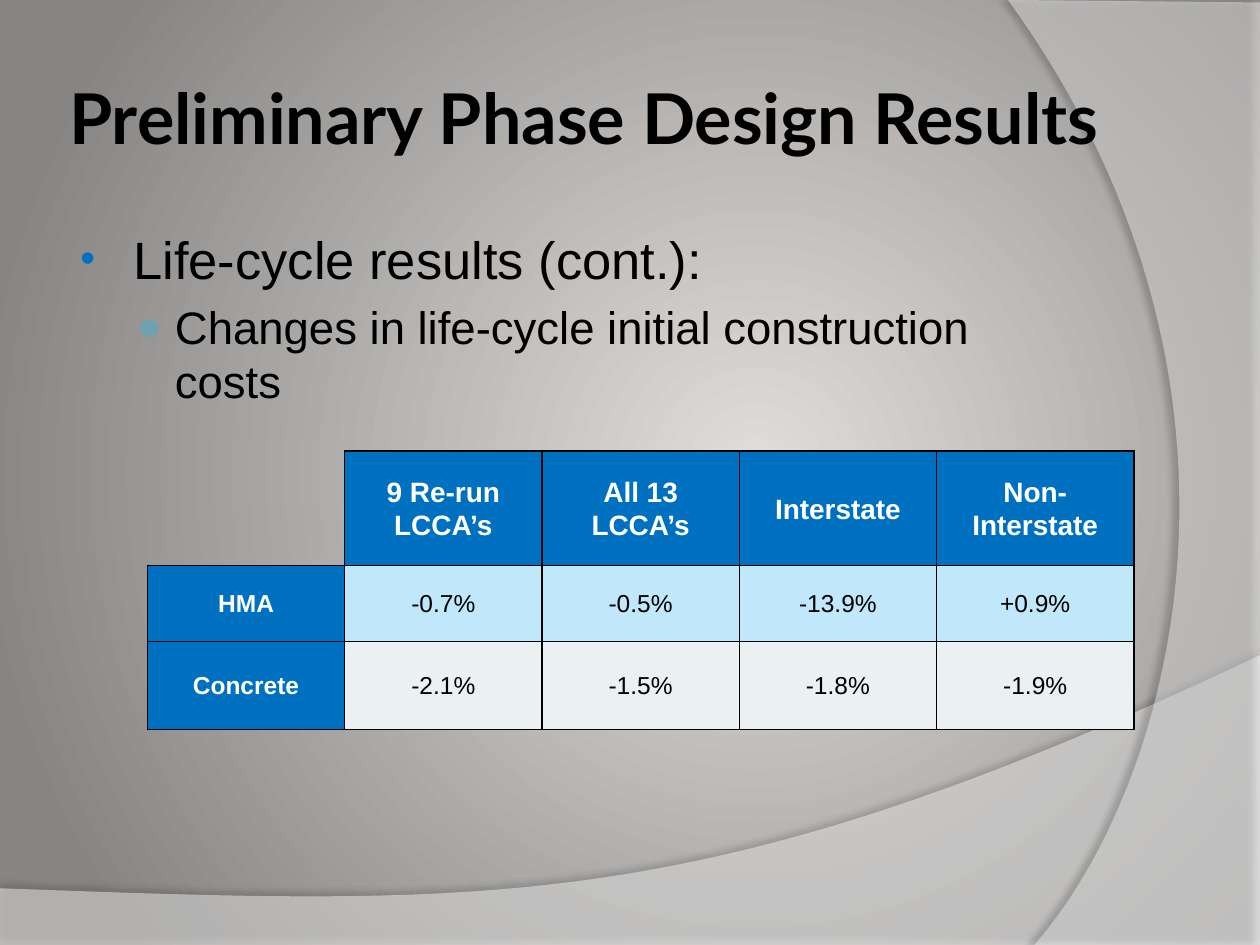
"""Build the preliminary phase design results slide."""
from lxml import etree
from pptx import Presentation
from pptx.dml.color import RGBColor
from pptx.enum.text import MSO_ANCHOR as ANC, PP_ALIGN as AL
from pptx.oxml import parse_xml
from pptx.oxml.ns import nsdecls, qn
from pptx.util import Inches, Pt

W, H = 10, 7.5
C = {"black": "000000", "white": "FFFFFF", "blue": "0070C0", "teal": "6EA0B0",
     "sky": "C0E8FA", "mist": "EBF0F2", "glow": "E0DDDA", "edge": "878583"}
TITLE = "Preliminary Phase Design Results"
BULLETS = [
    dict(text="Life-cycle results (cont.):", size=30, left=0.46, hang=0.42, char="•", color="blue", share=80),
    dict(text="Changes in life-cycle initial construction costs", size=26, left=0.79, hang=0.3,
         char="●", color="teal", share=90),
]
ROWS = [
    ("", "9 Re-run LCCA’s", "All 13 LCCA’s", "Interstate", "Non-Interstate"),
    ("HMA", "-0.7%", "-0.5%", "-13.9%", "+0.9%"),
    ("Concrete", "-2.1%", "-1.5%", "-1.8%", "-1.9%"),
]
ROW_H = [0.91, 0.6, 0.7]
ROW_FILL = ["blue", "sky", "mist"]
TABLE_X, TABLE_Y, TABLE_W = 1.17, 3.58, 7.83
SWEEPS = [
    dict(start=(0, 7.05), lines=[(0, 7.51), (W, 7.51), (W, 5.2)],
         curve=[(5.59, 7.29), (3.91, 7.19), (0, 7.05)], alpha=45, shade=35, dist=3.5, angle=270),
    dict(start=(W, 0.02), lines=[(W, H), (8.21, H)],
         curve=[(9.35, 6.19), (10.18, 3), (8, 0)], alpha=40, shade=45, dist=4, angle=180),
]


def rgb(name):
    return RGBColor.from_string(C[name])


def add_run(p, text, size, color="black", font="Arial", bold=False):
    r = p.add_run()
    r.text = text
    f = r.font
    f.size, f.name, f.bold = Pt(size), font, bold
    f.color.rgb = rgb(color)


def bezier(points, steps=60):
    for i in range(1, steps + 1):
        t = i / steps
        weights = ((1 - t) ** 3, 3 * t * (1 - t) ** 2, 3 * t * t * (1 - t), t ** 3)
        yield tuple(sum(k * pt[axis] for k, pt in zip(weights, points)) for axis in (0, 1))


def paint_background(s):
    fill = s.background.fill
    fill.gradient()
    for stop, name in zip(fill.gradient_stops, ("glow", "edge")):
        stop.color.rgb = rgb(name)
    grad = next(s.element.iter(qn("a:gradFill")))
    grad.replace(grad.find(qn("a:lin")), parse_xml(
        f'<a:path {nsdecls("a")} path="circle">'
        '<a:fillToRect l="60000" t="50000" r="40000" b="50000"/></a:path>'))


def add_sweep(s, sweep):
    points = sweep["lines"] + list(bezier([sweep["lines"][-1]] + sweep["curve"]))
    fb = s.shapes.build_freeform(*map(Inches, sweep["start"]))
    fb.add_line_segments([(Inches(x), Inches(y)) for x, y in points], close=True)
    sp = fb.convert_to_shape()
    sp.fill.solid()
    sp.fill.fore_color.rgb = rgb("white")
    sp.line.fill.background()
    color = next(sp.element.spPr.iter(qn("a:srgbClr")))
    etree.SubElement(color, qn("a:alpha"), val=str(sweep["alpha"] * 1000))
    sp.element.spPr.append(parse_xml(
        f'<a:effectLst {nsdecls("a")}><a:outerShdw blurRad="{Pt(4)}" dist="{Pt(sweep["dist"])}" '
        f'dir="{sweep["angle"] * 60000}" rotWithShape="0"><a:srgbClr val="{C["black"]}">'
        f'<a:alpha val="{sweep["shade"] * 1000}"/></a:srgbClr></a:outerShdw></a:effectLst>'))


def set_title(s):
    title = s.shapes.title
    title.element.getparent().append(title.element)
    title.left, title.top, title.width, title.height = map(Inches, (0.5, 0.3, 8.67, 1.25))
    tf = title.text_frame
    tf.margin_left = tf.margin_right = tf.margin_top = tf.margin_bottom = Inches(0.05)
    tf.vertical_anchor, tf.word_wrap = ANC.MIDDLE, True
    p = tf.paragraphs[0]
    p.alignment = AL.LEFT
    add_run(p, TITLE, 40, font="Lato", bold=True)


def add_bullets(s):
    tf = s.shapes.add_textbox(*map(Inches, (0.5, 1.75, 7.42, 4.95))).text_frame
    tf.word_wrap = True
    for level, b in enumerate(BULLETS):
        p = tf.add_paragraph() if level else tf.paragraphs[0]
        p.level, p.space_before = level, Pt(b["size"] * 0.2)
        add_run(p, b["text"], b["size"])
        pPr = p._p.get_or_add_pPr()
        pPr.set("marL", str(Inches(b["left"])))
        pPr.set("indent", str(-Inches(b["hang"])))
        color = etree.SubElement(pPr, qn("a:buClr"))
        etree.SubElement(color, qn("a:srgbClr"), val=C[b["color"]])
        etree.SubElement(pPr, qn("a:buSzPct"), val=str(b["share"] * 1000))
        etree.SubElement(pPr, qn("a:buFont"), typeface="Arial")
        etree.SubElement(pPr, qn("a:buChar"), char=b["char"])


def set_borders(cell, visible):
    tcPr = cell._tc.get_or_add_tcPr()
    for i, side in enumerate("LRTB"):
        paint = f'<a:solidFill><a:srgbClr val="{C["black"]}"/></a:solidFill>' if side in visible else "<a:noFill/>"
        tcPr.insert(i, parse_xml(f'<a:ln{side} {nsdecls("a")} w="{Pt(1)}">{paint}</a:ln{side}>'))


def fill_cell(cell, text, row, col):
    header = row == 0 or col == 0
    if text:
        cell.fill.solid()
        cell.fill.fore_color.rgb = rgb("blue" if header else ROW_FILL[row])
        p = cell.text_frame.paragraphs[0]
        p.alignment, p.line_spacing = AL.CENTER, 1.07
        add_run(p, text, 14 if row else 16, "white" if header else "black", bold=header)
    else:
        cell.fill.background()
    cell.vertical_anchor = ANC.MIDDLE
    cell.margin_left = cell.margin_right = Inches(0.07)
    cell.margin_top = cell.margin_bottom = 0
    set_borders(cell, "LRTB" if text else "RB")


def add_results(s):
    cols = len(ROWS[0])
    table = s.shapes.add_table(len(ROWS), cols, *map(Inches, (TABLE_X, TABLE_Y, TABLE_W, sum(ROW_H)))).table
    table.first_row = table.horz_banding = False
    for column in table.columns:
        column.width = Inches(TABLE_W / cols)
    for i, (texts, height) in enumerate(zip(ROWS, ROW_H)):
        table.rows[i].height = Inches(height)
        for j, text in enumerate(texts):
            fill_cell(table.cell(i, j), text, i, j)


def main():
    prs = Presentation()
    prs.slide_width, prs.slide_height = Inches(W), Inches(H)
    s = prs.slides.add_slide(prs.slide_layouts[5])
    paint_background(s)
    for sweep in SWEEPS:
        add_sweep(s, sweep)
    set_title(s)
    add_bullets(s)
    add_results(s)
    prs.save("out.pptx")


if __name__ == "__main__":
    main()
